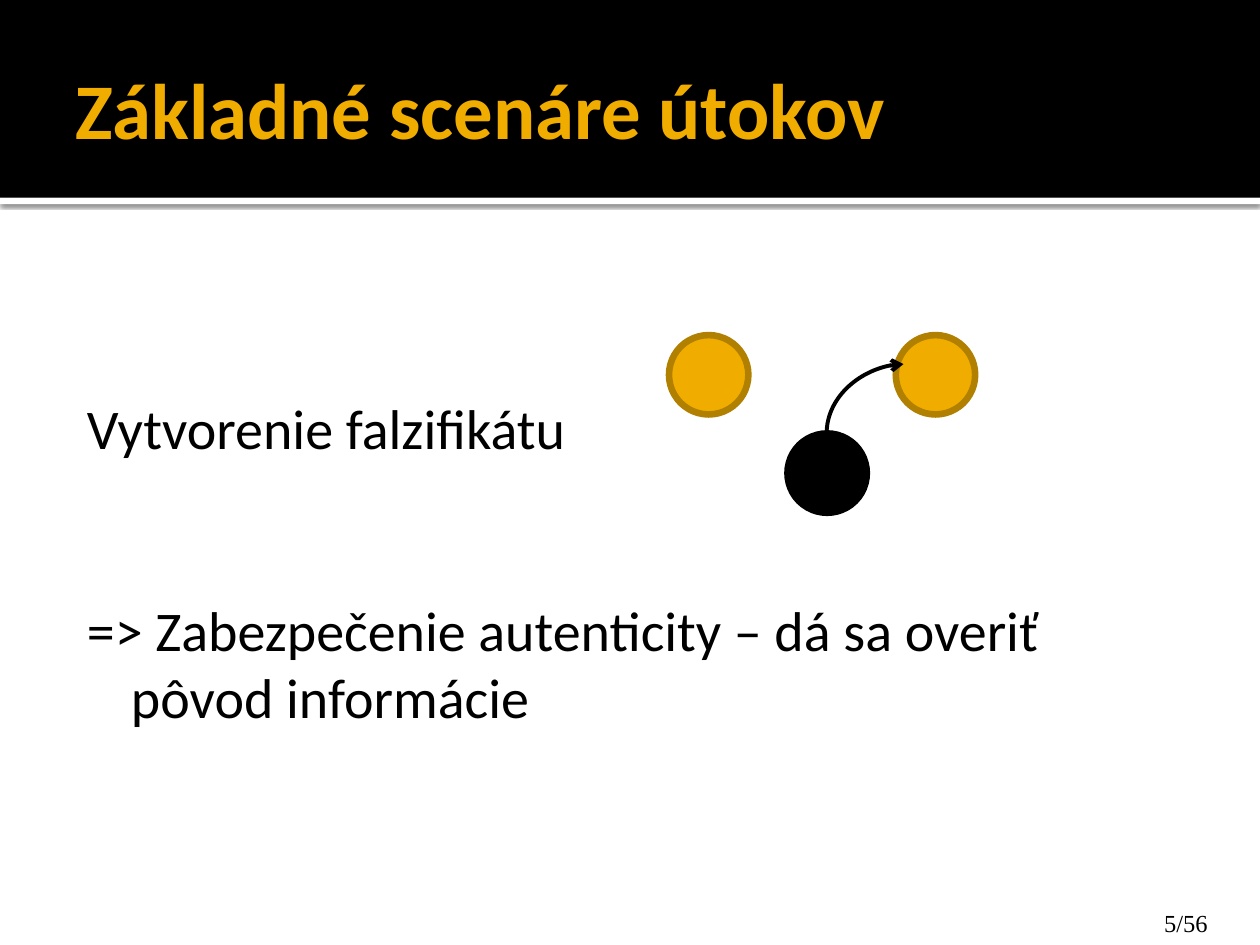
from lxml import etree
from pptx import Presentation
from pptx.dml.color import RGBColor
from pptx.enum import shapes, text
from pptx.oxml import parse_xml
from pptx.oxml.ns import nsdecls, qn
from pptx.util import Inches, Pt

BLACK = RGBColor(0x00, 0x00, 0x00)
WHITE = RGBColor(0xFF, 0xFF, 0xFF)
AMBER = RGBColor(0xF0, 0xAD, 0x00)
BROWN = RGBColor(0xB2, 0x80, 0x00)


def add_solid(parent, kind, box, fill, line=None):
    """Add a filled preset shape, outlined only if a line colour is given."""
    sp = parent.add_shape(kind, *map(Inches, box))
    sp.shadow.inherit = False
    sp.fill.solid()
    sp.fill.fore_color.rgb = fill
    if line is None:
        sp.line.fill.background()
    else:
        sp.line.color.rgb = line
        sp.line.width = Pt(3.78)
    return sp


def add_text(s, box, lines, size, font, color, bold=False, insets=(0.1, 0.05, 0.1, 0.05)):
    """Add a wrapped text box with one paragraph per line and return its frame."""
    tf = s.shapes.add_textbox(*map(Inches, box)).text_frame
    tf.word_wrap = True
    tf.margin_left, tf.margin_top, tf.margin_right, tf.margin_bottom = map(Inches, insets)
    tf.text = "\n".join(lines)
    for p in tf.paragraphs:
        for r in p.runs:
            r.font.size = Pt(size)
            r.font.name = font
            r.font.bold = bold
            r.font.color.rgb = color
    return tf


def add_header(s, left, top, width, height):
    """Draw the black title band with its shadowed white rule and the title."""
    rect = shapes.MSO_SHAPE.RECTANGLE
    rule = add_solid(s.shapes, rect, (left, top + height, width, 0.05), WHITE)
    effects = rule._element.spPr.find(qn("a:effectLst"))
    effects.append(parse_xml(
        f'<a:outerShdw {nsdecls("a")} blurRad="{Pt(2.5)}" dist="{Pt(0.8)}" dir="5400000" '
        'algn="t" rotWithShape="0"><a:srgbClr val="000000"><a:alpha val="60000"/>'
        '</a:srgbClr></a:outerShdw>'))
    add_solid(s.shapes, rect, (left, top, width, height), BLACK)
    tf = add_text(s, (left + 0.5, top + 0.17, width - 1, 1.37), ["Základné scenáre útokov"],
                  45, "Calibri", AMBER, True, (0.1, 0.05, 0.05, 0.05))
    tf.vertical_anchor = text.MSO_ANCHOR.MIDDLE


def add_body(s, left, top, width, height):
    """Write the attack name and, below a gap, the protection against it."""
    lines = ["Vytvorenie falzifikátu",
             "=> Zabezpečenie autenticity – dá sa overiť pôvod informácie"]
    tf = add_text(s, (left, top, width, height), lines, 32, "Calibri", BLACK,
                  insets=(0.06, 1.18, 0.1, 0.05))
    attack, protection = tf.paragraphs
    protection.space_before = Pt(77)
    for p, margin, indent in ((attack, 0.13, 0), (protection, 0.48, -0.35)):
        pPr = p._p.get_or_add_pPr()
        pPr.set("marL", str(Inches(margin)))
        pPr.set("indent", str(Inches(indent)))


def add_diagram(s, left, top, width, height):
    """Draw two parties and the attacker sending a forgery to the second one."""
    size = 0.63
    group = s.shapes.add_group_shape().shapes
    circles = ((left, top, AMBER, BROWN),
               (left + width - size, top, AMBER, BROWN),
               (left + 0.94, top + height - size, BLACK, BLACK))
    for x, y, fill, line in circles:
        add_solid(group, shapes.MSO_SHAPE.OVAL, (x, y, size, size), fill, line)
    ends = left + 1.83, top + 0.81, left + 1.28, top + 0.2
    arrow = group.add_connector(shapes.MSO_CONNECTOR.CURVE, *map(Inches, ends))
    arrow.line.color.rgb = BLACK
    arrow.line.width = Pt(2.25)
    spPr = arrow._element.spPr
    spPr.find(qn("a:xfrm")).set("rot", "5400000")
    spPr.find(qn("a:prstGeom")).set("prst", "curvedConnector2")
    etree.SubElement(spPr.find(qn("a:ln")), qn("a:tailEnd"), type="arrow")
    etree.SubElement(spPr, qn("a:effectLst"))


def main():
    """Build the slide and save it."""
    prs = Presentation()
    prs.slide_width, prs.slide_height = Inches(10), Inches(7.5)
    s = prs.slides.add_slide(prs.slide_layouts[6])
    add_header(s, 0, 0, 10, 1.57)
    add_text(s, (9.14, 7.16, 0.86, 0.34), ["5/56"], 14, "Times New Roman", BLACK)
    add_body(s, 0.5, 1.94, 9, 5.06)
    add_diagram(s, 5.31, 2.66, 2.43, 1.41)
    prs.save("out.pptx")


if __name__ == "__main__":
    main()
